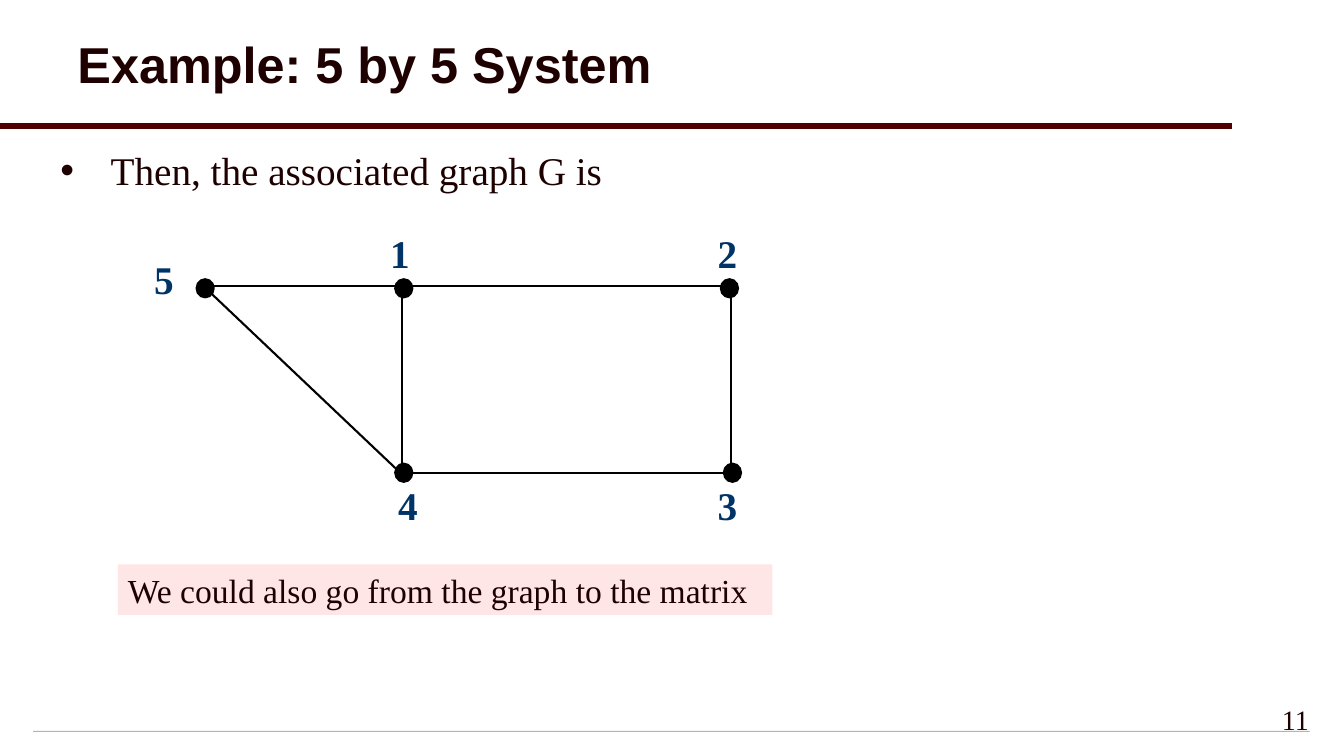
"""Build a slide that shows the graph of a 5 by 5 system."""
from dataclasses import dataclass

from lxml.etree import SubElement as Sub
from pptx import Presentation
from pptx.dml.color import RGBColor as RGB
from pptx.enum.shapes import MSO_CONNECTOR as Link, MSO_SHAPE as Form
from pptx.enum.text import MSO_ANCHOR as Anchor, PP_ALIGN as Align
from pptx.oxml.ns import qn
from pptx.util import Inches, Pt


@dataclass(frozen=True)
class Theme:
    """Hold the colours, fonts and type sizes."""
    ink: RGB = RGB.from_string("1E0000")
    rule: RGB = RGB.from_string("500000")
    label: RGB = RGB.from_string("003366")
    edge: RGB = RGB.from_string("000000")
    note: RGB = RGB.from_string("FFE6E6")
    foot: RGB = RGB.from_string("B4B4B4")
    head: str = "Arial"
    body: str = "Times New Roman"
    title: Pt = Pt(36)
    text: Pt = Pt(28)
    small: Pt = Pt(24)
    page: Pt = Pt(20)


theme = Theme()
deck = Presentation()
deck.slide_width, deck.slide_height = Inches(13.33), Inches(7.5)
slide = deck.slides.add_slide(deck.slide_layouts[6])
shapes = slide.shapes


def write(shape, text, size, color=theme.ink, **extra):
    """Put one styled paragraph in a shape and return it."""
    shape.text_frame.word_wrap = True
    para = shape.text_frame.paragraphs[0]
    para.alignment = Align.LEFT
    run = para.add_run()
    run.text = text
    run.font.color.rgb = color
    style = {"name": theme.body, "size": size, "bold": False} | extra
    for key, value in style.items():
        setattr(run.font, key, value)
    return para


def join(start, end, color, width):
    """Draw a straight line between two points."""
    ends = [Inches(n) for n in (*start, *end)]
    line = shapes.add_connector(Link.STRAIGHT, *ends)
    line.line.color.rgb = color
    line.line.width = Pt(width)
    Sub(line._element.spPr, qn("a:effectLst"))


foot = shapes.add_shape(Form.RECTANGLE, Inches(0.33), Inches(7.25),
                        Inches(12.66), Inches(0.01))
foot.shadow.inherit = False
foot.fill.solid()
foot.fill.fore_color.rgb = theme.foot
foot.line.fill.background()
join((0, 1.25), (12.22, 1.25), theme.rule, 4)

title = shapes.add_textbox(Inches(0.67), Inches(0.08), Inches(12.22), Inches(1.17))
title.text_frame.vertical_anchor = Anchor.MIDDLE
para = write(title, "Example: 5 by 5 System", theme.title, name=theme.head, bold=True)
para.line_spacing = 0.9

body = shapes.add_textbox(Inches(0.5), Inches(1.4), Inches(9.27), Inches(0.95))
para = write(body, "Then, the associated graph G is", theme.text)
props = para._p.get_or_add_pPr()
props.set("marL", str(Inches(0.5)))
props.set("indent", str(-Inches(0.5)))
Sub(props, qn("a:buFont"), typeface=theme.head)
Sub(props, qn("a:buChar"), char="•")

labels = {"1": (3.77, 2.23), "2": (7.02, 2.23), "3": (7.02, 4.73),
          "4": (3.85, 4.73), "5": (1.43, 2.48)}
for name, (left, top) in labels.items():
    box = shapes.add_textbox(Inches(left), Inches(top), Inches(0.49), Inches(0.53))
    write(box, name, theme.text, theme.label, bold=True)

nodes = [(3.92, 2.77), (7.15, 2.77), (7.18, 4.6), (3.92, 4.6), (1.95, 2.77)]
for left, top in nodes:
    dot = shapes.add_shape(Form.OVAL, Inches(left), Inches(top),
                           Inches(0.17), Inches(0.18))
    dot.shadow.inherit = False
    dot.fill.solid()
    dot.fill.fore_color.rgb = theme.edge
    dot.line.color.rgb = theme.edge
    dot.line.width = Pt(1.5)

edges = [((2.02, 2.84), (7.22, 2.84)), ((3.99, 2.84), (3.99, 4.71)),
         ((7.25, 2.89), (7.25, 4.76)), ((4.04, 4.69), (7.25, 4.69)),
         ((2.02, 2.84), (3.97, 4.69))]
for start, end in edges:
    join(start, end, theme.edge, 1.5)

note = shapes.add_shape(Form.RECTANGLE, Inches(1.17), Inches(5.6),
                        Inches(6.49), Inches(0.5))
note.shadow.inherit = False
note.fill.solid()
note.fill.fore_color.rgb = theme.note
note.line.fill.background()
note.text_frame.vertical_anchor = Anchor.MIDDLE
write(note, "We could also go from the graph to the matrix", theme.small)

page = shapes.add_textbox(Inches(11), Inches(6.92), Inches(2.08), Inches(0.5))
write(page, "11", theme.page).alignment = Align.RIGHT

deck.save("out.pptx")
